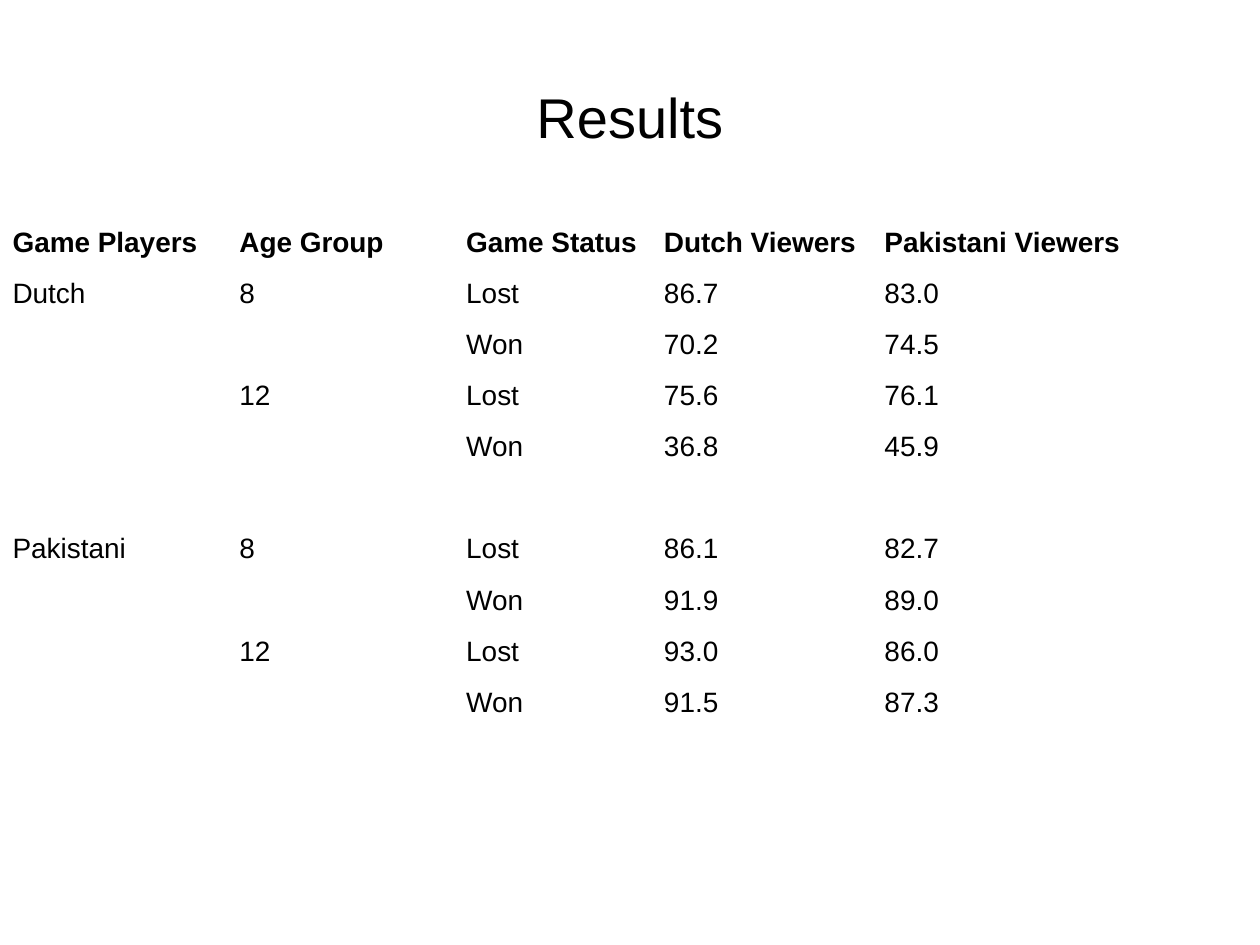
import pptx
import pptx.util
import pptx.dml.color
import pptx.enum.text

Inches = pptx.util.Inches
COLORS = {"text": "000000", "back": "FFFFFF"}
FONT = "Arial"
WIDTHS = [1.8, 1.8, 1.57, 1.75, 2.08]
ROWS = [
    ["Game Players", "Age Group", "Game Status", "Dutch Viewers", "Pakistani Viewers"],
    ["Dutch", "8", "Lost", "86.7", "83.0"],
    ["", "", "Won", "70.2", "74.5"],
    ["", "12", "Lost", "75.6", "76.1"],
    ["", "", "Won", "36.8", "45.9"],
    ["", "", "", "", ""],
    ["Pakistani", "8", "Lost", "86.1", "82.7"],
    ["", "", "Won", "91.9", "89.0"],
    ["", "12", "Lost", "93.0", "86.0"],
    ["", "", "Won", "91.5", "87.3"],
]


def color(name):
    """Return the named colour."""
    return pptx.dml.color.RGBColor.from_string(COLORS[name])


def style(frame, size, bold=False):
    """Format every run of a text frame."""
    for para in frame.paragraphs:
        for run in para.runs:
            run.font.name = FONT
            run.font.size = pptx.util.Pt(size)
            run.font.bold = bold
            run.font.color.rgb = color("text")


def add_title(slide, text):
    """Place and fill the title."""
    title = slide.shapes.title
    title.left, title.top = Inches(0.5), Inches(0.3)
    title.width, title.height = Inches(9), Inches(1.25)
    frame = title.text_frame
    frame.text = text
    frame.vertical_anchor = pptx.enum.text.MSO_ANCHOR.MIDDLE
    frame.paragraphs[0].alignment = pptx.enum.text.PP_ALIGN.CENTER
    style(frame, 32)


def add_grid(slide, rows, widths):
    """Add the results table with a bold header row."""
    shape = slide.shapes.add_table(
        len(rows), len(widths), Inches(0), Inches(1.75), Inches(sum(widths)), Inches(4.06)
    )
    table = shape.table
    table.horz_banding = False
    for col, width in zip(table.columns, widths):
        col.width = Inches(width)
    for r, row in enumerate(rows):
        for c, text in enumerate(row):
            cell = table.cell(r, c)
            cell.fill.solid()
            cell.fill.fore_color.rgb = color("back")
            cell.text_frame.text = text
            style(cell.text_frame, 16, bold=r == 0)


def main():
    """Build and save the slide."""
    deck = pptx.Presentation()
    deck.slide_width, deck.slide_height = Inches(10), Inches(7.5)
    slide = deck.slides.add_slide(deck.slide_layouts[5])
    add_title(slide, "Results")
    add_grid(slide, ROWS, WIDTHS)
    deck.save("out.pptx")


if __name__ == "__main__":
    main()
